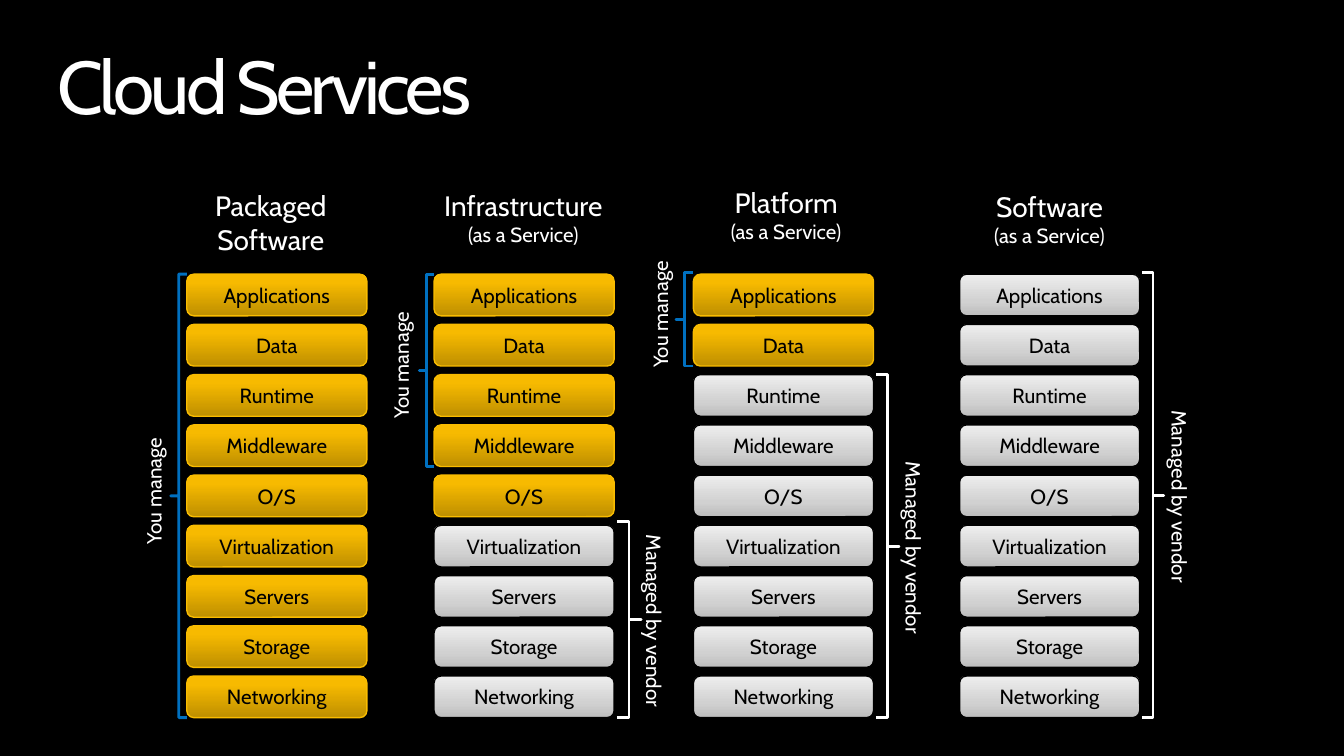
from lxml import etree
from pptx import Presentation
from pptx.dml.color import RGBColor
from pptx.enum.shapes import MSO_SHAPE
from pptx.enum.text import MSO_ANCHOR, MSO_AUTO_SIZE, PP_ALIGN
from pptx.oxml.ns import qn
from pptx.util import Inches, Pt

ROUNDED, BRACE = MSO_SHAPE.ROUNDED_RECTANGLE, MSO_SHAPE.LEFT_BRACE
TOP, MIDDLE = MSO_ANCHOR.TOP, MSO_ANCHOR.MIDDLE
LEFT, CENTER = PP_ALIGN.LEFT, PP_ALIGN.CENTER
GROW = MSO_AUTO_SIZE.SHAPE_TO_FIT_TEXT

TITLE = "Cloud Services"
LAYERS = ["Applications", "Data", "Runtime", "Middleware", "O/S",
          "Virtualization", "Servers", "Storage", "Networking"]
AS_A_SERVICE = ("(as a Service)", 11)

# Rows are first and last layer; heading is left, top, width of its frame.
# "rise" lifts the start of a bracket above its first layer.
MODELS = [
    dict(heading=[("Packaged Software", 15)], frame=(1.25, 1.28, 1.53), left=1.39,
         yours=9, brackets=[dict(side="you", rows=(0, 8), width=0.12, rise=0)]),
    dict(heading=[("Infrastructure", 15), AS_A_SERVICE], frame=(2.83, 1.25, 2.13), left=3.23,
         yours=5, brackets=[dict(side="you", rows=(0, 3), width=0.11, rise=0),
                            dict(side="vendor", rows=(5, 8), width=0.18, rise=0.03)]),
    dict(heading=[("Platform", 15), AS_A_SERVICE], frame=(5.03, 1.25, 1.64), left=5.16,
         yours=2, brackets=[dict(side="you", rows=(0, 1), width=0.13, rise=0.01),
                            dict(side="vendor", rows=(2, 8), width=0.17, rise=0)]),
    dict(heading=[("Software", 15), AS_A_SERVICE], frame=(6.98, 1.28, 1.66), left=7.14,
         yours=0, brackets=[dict(side="vendor", rows=(0, 8), width=0.16, rise=0.01)]),
]

COLORS = dict(background="000000", light="FFFFFF", dark="000000", you="0070C0",
              vendor="FFFFFF", gold_line="F9BC00", gray_line="000000")
GOLD = dict(stops=[(0, "BE8F00"), (80, "F7BA00"), (100, "F8BB00")],
            line="gold_line", shadow=(35, 1.8))
GRAY = dict(stops=[(0, "BDBDBD"), (35, "D1D1D1"), (100, "EEEEEE")],
            line="gray_line", shadow=(38, 1.6))
SIDES = dict(
    you=dict(text="You manage", direction="vert270", length=0.96, shift=-0.02),
    vendor=dict(text="Managed by vendor", direction="eaVert", length=1.48, shift=0.01))

FONT = "Cabin"
SLIDE_W = Inches(10)
SLIDE_H = SLIDE_W * 9 // 16
FIRST_TOP, LAST_TOP = 2.04, 5.03
PITCH = (LAST_TOP - FIRST_TOP) / (len(LAYERS) - 1)
BOX_W, BOX_H = 1.34, 0.31
FRAME_H, LABEL_W, LABEL_GAP = 4.06, 0.39, 0.05


def color(key):
    return RGBColor.from_string(COLORS[key])


def row_top(row):
    return FIRST_TOP + row * PITCH


def write(shape, lines, ink, align=CENTER, anchor=MIDDLE, side_inset=0.1):
    frame = shape.text_frame
    frame.word_wrap = True
    frame.vertical_anchor = anchor
    frame.margin_left = frame.margin_right = Inches(side_inset)
    for index, (text, size) in enumerate(lines):
        paragraph = frame.add_paragraph() if index else frame.paragraphs[0]
        paragraph.alignment = align
        run = paragraph.add_run()
        run.text = text
        run.font.name, run.font.size = FONT, Pt(size)
        run.font.color.rgb = color(ink)
    return frame


def add_shape(group, preset, left, top, width, height):
    """Add a shape with no fill, line or shadow."""
    shape = group.shapes.add_shape(preset, *map(Inches, (left, top, width, height)))
    shape.shadow.inherit = False
    shape.fill.background()
    shape.line.fill.background()
    return shape


def outline(shape, key, width):
    shape.line.color.rgb = color(key)
    shape.line.width = Pt(width)


def add_color(parent, value):
    return etree.SubElement(parent, qn("a:srgbClr"), val=value)


def add_layer(group, name, left, top, look):
    box = add_shape(group, ROUNDED, left, top, BOX_W, BOX_H)
    outline(box, look["line"], 0.75)
    properties = box.element.spPr
    gradient = etree.Element(qn("a:gradFill"), rotWithShape="1")
    stops = etree.SubElement(gradient, qn("a:gsLst"))
    for position, value in look["stops"]:
        add_color(etree.SubElement(stops, qn("a:gs"), pos=str(position * 1000)), value)
    etree.SubElement(gradient, qn("a:lin"), ang="16200000", scaled="0")
    properties.replace(properties.find(qn("a:noFill")), gradient)
    opacity, distance = look["shadow"]
    shadow = etree.SubElement(properties.find(qn("a:effectLst")), qn("a:outerShdw"),
                              blurRad=str(Pt(3.1)), dist=str(Pt(distance)),
                              dir="5400000", rotWithShape="0")
    etree.SubElement(add_color(shadow, COLORS["dark"]), qn("a:alpha"), val=str(opacity * 1000))
    write(box, [(name, 11)], "dark", side_inset=0)


def add_bracket(group, left, side, rows, width, rise):
    """Bracket the rows of one column and label who manages them."""
    style, right = SIDES[side], left + BOX_W
    top = row_top(rows[0]) - rise
    height = row_top(rows[1]) + BOX_H - top
    brace_left = left - width if side == "you" else right + 0.02
    brace = add_shape(group, BRACE, brace_left, top, width, height)
    brace.adjustments[0] = 0
    outline(brace, side, 1.5)
    if side == "vendor":
        brace.element.spPr.find(qn("a:xfrm")).set("flipH", "1")

    label_left = left - LABEL_W if side == "you" else right + LABEL_GAP
    label_top = top + (height - style["length"]) / 2 + style["shift"]
    label = group.shapes.add_textbox(
        *map(Inches, (label_left, label_top, LABEL_W, style["length"])))
    frame = write(label, [(style["text"], 11)], "light", LEFT, TOP)
    frame.word_wrap = False
    frame.auto_size = GROW
    label.element.txBody.find(qn("a:bodyPr")).set("vert", style["direction"])


def add_model(slide, model):
    group = slide.shapes.add_group_shape()
    heading = add_shape(group, ROUNDED, *model["frame"], FRAME_H)
    write(heading, model["heading"], "light", anchor=TOP,
          side_inset=0.1 if len(model["heading"]) > 1 else 0)
    for row, name in enumerate(LAYERS):
        look = GOLD if row < model["yours"] else GRAY
        add_layer(group, name, model["left"], row_top(row), look)
    for bracket in model["brackets"]:
        add_bracket(group, model["left"], **bracket)


def add_title(slide):
    title = slide.shapes.title
    title.left, title.top, title.width, title.height = map(Inches, (0.43, 0.37, 9.15, 0.61))
    frame = write(title, [(TITLE, 40)], "light", LEFT, TOP, side_inset=0)
    frame.margin_top = frame.margin_bottom = 0
    frame.auto_size = GROW
    paragraph = frame.paragraphs[0]
    paragraph.line_spacing = 0.9
    paragraph.runs[0].font._element.set("spc", "-200")


def main():
    deck = Presentation()
    deck.slide_width, deck.slide_height = SLIDE_W, SLIDE_H
    slide = deck.slides.add_slide(deck.slide_layouts[5])
    slide.background.fill.solid()
    slide.background.fill.fore_color.rgb = color("background")
    add_title(slide)
    for model in MODELS:
        add_model(slide, model)
    deck.save("out.pptx")


if __name__ == "__main__":
    main()
